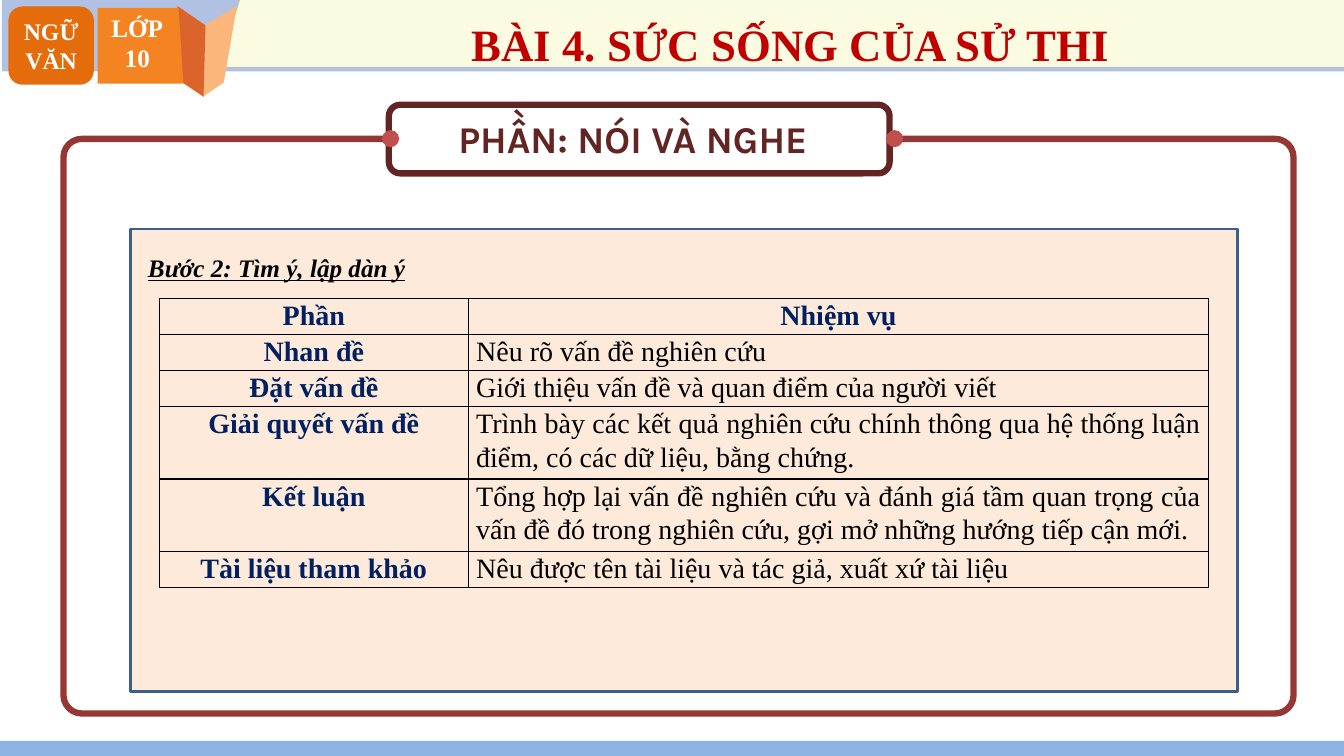
from lxml.etree import SubElement
from pptx import Presentation
from pptx.dml.color import RGBColor
from pptx.enum.shapes import MSO_SHAPE
from pptx.enum.text import MSO_ANCHOR, PP_ALIGN
from pptx.oxml.ns import qn
from pptx.util import Cm, Pt

WHITE = RGBColor(0xFF, 0xFF, 0xFF)
BLACK = RGBColor(0, 0, 0)
NAVY = RGBColor(0x00, 0x20, 0x60)
RED = RGBColor(0xC0, 0, 0)
MAROON = RGBColor(0x63, 0x25, 0x23)
BRICK = RGBColor(0x95, 0x37, 0x35)
DOT_RED = RGBColor(0xC0, 0x50, 0x4D)
ORANGE = RGBColor(0xE4, 0x6C, 0x0A)
RIBBON_FRONT = RGBColor(0xF4, 0x83, 0x21)
RIBBON_DARK = RGBColor(0xDB, 0x64, 0x2D)
RIBBON_LIGHT = RGBColor(0xFB, 0xB6, 0x7C)
CREAM = RGBColor(0xFB, 0xFB, 0xE1)
GREY = RGBColor(0xBF, 0xBF, 0xBF)
HEADER_BLUE = RGBColor(0xB1, 0xC1, 0xE4)
FOOTER_BLUE = RGBColor(0x8E, 0xB4, 0xE3)
PEACH = RGBColor(0xFD, 0xEA, 0xDA)
PANEL_BLUE = RGBColor(0x3A, 0x5F, 0x8C)
SERIF = "Times New Roman"

deck = Presentation()
deck.slide_width, deck.slide_height = Cm(33.87), Cm(19.05)
page = deck.slides.add_slide(deck.slide_layouts[5])
shapes = page.shapes


def paint(shape, fill=None, line=None, width=1):
    shape.shadow.inherit = False
    if fill is None:
        shape.fill.background()
    else:
        shape.fill.solid()
        shape.fill.fore_color.rgb = fill
    if line is None:
        shape.line.fill.background()
    else:
        shape.line.color.rgb = line
        shape.line.width = Pt(width)
    return shape


def write(frame, text, size, color, align=PP_ALIGN.CENTER, font=SERIF, bold=True):
    frame.word_wrap = True
    frame.vertical_anchor = MSO_ANCHOR.MIDDLE
    frame.text = text
    for para in frame.paragraphs:
        para.alignment = align
        para.font.name = font
        para.font.size = Pt(size)
        para.font.bold = bold
        para.font.color.rgb = color


# Footer and header bands
for left, top, width, height, color in [(0, 18.67, 33.87, 0.38, FOOTER_BLUE),
                                        (0.05, 0, 33.82, 1.8, HEADER_BLUE)]:
    paint(shapes.add_shape(MSO_SHAPE.RECTANGLE, Cm(left), Cm(top), Cm(width), Cm(height)), color)

# Slanted title banner and the folded ribbon
outlines = [
    ([(5.49, 1.7), (6.1, -0.2), (34.14, -0.2), (34.14, 1.7)], CREAM, GREY),
    ([(5.11, 2.44), (5.16, 0.64), (5.97, 0.15), (5.64, 2.08)], RIBBON_LIGHT, None),
    ([(5.13, 2.44), (4.6, 2.08), (4.47, 0.15), (5.18, 0.64)], RIBBON_DARK, None),
    ([(4.62, 2.11), (2.46, 2.11), (2.46, 0.2), (4.5, 0.2)], RIBBON_FRONT, None),
]
for corners, fill, line in outlines:
    points = [(Cm(x), Cm(y)) for x, y in corners]
    builder = shapes.build_freeform(*points[0])
    builder.add_line_segments(points[1:], close=True)
    paint(builder.convert_to_shape(), fill, line, 0.75)

# Class and subject badges
grade = shapes.add_textbox(Cm(2.46), Cm(0.25), Cm(2), Cm(1.63))
write(grade.text_frame, "LỚP\n10", 18, WHITE)
subject = shapes.add_shape(MSO_SHAPE.ROUNDED_RECTANGLE, Cm(0.25), Cm(0.2), Cm(2.08), Cm(1.9))
paint(subject, ORANGE, ORANGE, 2)
write(subject.text_frame, "NGỮ VĂN", 17, WHITE)

# Title, brought in front of the banner
title = shapes.title
title.left, title.top, title.width, title.height = Cm(5.97), Cm(0.36), Cm(27.9), Cm(1.5)
write(title.text_frame, "BÀI 4. SỨC SỐNG CỦA SỬ THI", 32, RED)
title.element.getparent().append(title.element)

# Frame with the section label on its upper edge
frame = shapes.add_shape(MSO_SHAPE.ROUNDED_RECTANGLE, Cm(1.6), Cm(3.5), Cm(31), Cm(14.48))
frame.adjustments[0] = 0.032
paint(frame, line=BRICK, width=4.5)
paint(shapes.add_shape(MSO_SHAPE.RECTANGLE, Cm(9.78), Cm(3.07), Cm(12.62), Cm(1.04)), WHITE)
label = shapes.add_shape(MSO_SHAPE.ROUNDED_RECTANGLE, Cm(9.8), Cm(2.64), Cm(12.62), Cm(1.73))
paint(label, line=MAROON, width=4.5)
section = shapes.add_textbox(Cm(11.3), Cm(2.79), Cm(10.49), Cm(1.42))
write(section.text_frame, "PHẦN: NÓI VÀ NGHE", 27, MAROON, PP_ALIGN.LEFT, "Karla")
for left in (22.33, 9.63):
    paint(shapes.add_shape(MSO_SHAPE.OVAL, Cm(left), Cm(3.28), Cm(0.43), Cm(0.43)), DOT_RED)

# Panel with the step heading
panel = shapes.add_shape(MSO_SHAPE.RECTANGLE, Cm(3.3), Cm(5.77), Cm(27.89), Cm(11.66))
paint(panel, PEACH, PANEL_BLUE, 2)
write(panel.text_frame, "Bước 2: Tìm ý, lập dàn ý", 18, BLACK, PP_ALIGN.LEFT)
panel.text_frame.vertical_anchor = MSO_ANCHOR.TOP
panel.text_frame.margin_left, panel.text_frame.margin_top = Cm(0.43), Cm(0.6)
heading = panel.text_frame.paragraphs[0]
heading.font.italic = heading.font.underline = True

# Outline table
rows = [
    ("Phần", "Nhiệm vụ", 1),
    ("Nhan đề", "Nêu rõ vấn đề nghiên cứu", 1),
    ("Đặt vấn đề", "Giới thiệu vấn đề và quan điểm của người viết", 1),
    ("Giải quyết vấn đề", "Trình bày các kết quả nghiên cứu chính thông qua hệ thống luận điểm, "
     "có các dữ liệu, bằng chứng.", 2),
    ("Kết luận", "Tổng hợp lại vấn đề nghiên cứu và đánh giá tầm quan trọng của vấn đề đó "
     "trong nghiên cứu, gợi mở những hướng tiếp cận mới.", 2),
    ("Tài liệu tham khảo", "Nêu được tên tài liệu và tác giả, xuất xứ tài liệu", 1),
]
LINE_HEIGHT = 0.91
table = shapes.add_table(len(rows), 2, Cm(4.01), Cm(7.52), Cm(26.44), Cm(8 * LINE_HEIGHT)).table
table.first_row = table.horz_banding = False
table.columns[0].width, table.columns[1].width = Cm(7.8), Cm(18.64)
for row, (part, task, lines) in enumerate(rows):
    table.rows[row].height = Cm(lines * LINE_HEIGHT)
    for column, text in enumerate((part, task)):
        cell = table.cell(row, column)
        cell.margin_left = cell.margin_right = Cm(0.19)
        cell.margin_top = cell.margin_bottom = 0
        is_label = row == 0 or column == 0
        write(cell.text_frame, text, 20, NAVY if is_label else BLACK,
              PP_ALIGN.CENTER if is_label else PP_ALIGN.JUSTIFY, bold=is_label)
        cell.text_frame.paragraphs[0].line_spacing = 1.07
        cell.vertical_anchor = MSO_ANCHOR.TOP
        # Black border on every side, placed ahead of the fill
        properties = cell._tc.get_or_add_tcPr()
        for side in ("a:lnL", "a:lnR", "a:lnT", "a:lnB"):
            border = SubElement(properties, qn(side), w=str(Pt(1)))
            solid = SubElement(border, qn("a:solidFill"))
            SubElement(solid, qn("a:srgbClr"), val=str(BLACK))
        cell.fill.background()

deck.save("out.pptx")
